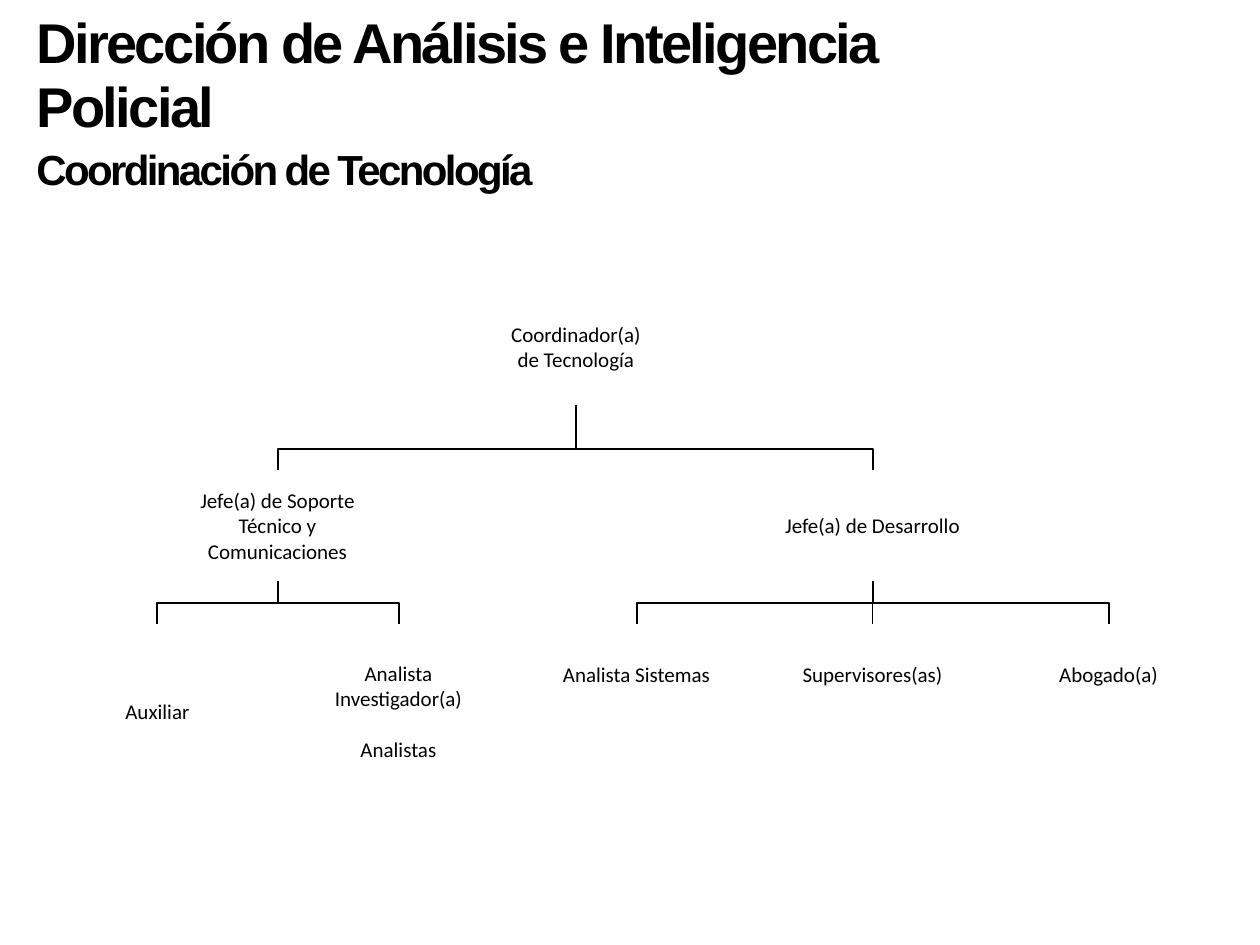
from pptx import Presentation
from pptx.dml.color import RGBColor
from pptx.enum import shapes, text
from pptx.oxml import ns, xmlchemy
from pptx.util import Emu, Pt

PX = 914400 / 126
BLACK = RGBColor(0, 0, 0)
WHITE = RGBColor(255, 255, 255)


class Chart:
    """Draws an organisation chart on one slide, in px."""
    font = "Calibri"
    size = 12
    bend = 21  # from a bend down to the child box

    def __init__(self, slide):
        self.slide = slide

    def px(self, *vals):
        return [Emu(round(v * PX)) for v in vals]

    def label(self, para, line, font, size, bold=False):
        run = para.add_run()
        run.text = line
        para.font.name = font
        para.font.size = Pt(size)
        para.font.bold = bold
        para.font.color.rgb = BLACK
        return run

    def title(self, x, y, w, h, lines):
        box = self.slide.shapes.add_textbox(*self.px(x, y, w, h))
        frame = box.text_frame
        frame.word_wrap = True
        for i, (line, size, space) in enumerate(lines):
            para = frame.add_paragraph() if i else frame.paragraphs[0]
            run = self.label(para, line, "Arial", size, True)
            run.font._element.set("spc", "-150")
            para.line_spacing = space
            if i:
                para.space_before = Pt(2)

    def box(self, x, y, w, h, *lines, gap=0):
        rect = self.slide.shapes.add_shape(
            shapes.MSO_SHAPE.RECTANGLE, *self.px(x, y, w, h))
        rect.shadow.inherit = False
        rect.fill.solid()
        rect.fill.fore_color.rgb = WHITE
        rect.line.fill.background()
        frame = rect.text_frame
        frame.word_wrap = True
        frame.vertical_anchor = text.MSO_ANCHOR.MIDDLE
        frame.margin_left = frame.margin_right = Pt(1)
        frame.margin_top = frame.margin_bottom = Pt(1)
        for i, line in enumerate(lines):
            para = frame.add_paragraph() if i else frame.paragraphs[0]
            para.alignment = text.PP_ALIGN.CENTER
            if i and gap:
                para.space_before = Pt(gap)
            self.label(para, line, self.font, self.size)
        return rect

    def elbow(self, top, low):
        x, y = (top.left + top.width / 2) / PX, (top.top + top.height) / PX
        end, foot = (low.left + low.width / 2) / PX, low.top / PX
        mid = foot - self.bend
        route = self.slide.shapes.build_freeform(x, y, scale=PX)
        route.add_line_segments([(x, mid), (end, mid), (end, foot)], close=False)
        link = route.convert_to_shape()
        link.fill.background()
        link.shadow.inherit = False
        self.ink(link)

    def line(self, top, low):
        link = self.slide.shapes.add_connector(
            shapes.MSO_CONNECTOR.STRAIGHT, 0, 0, 0, 0)
        link.begin_connect(top, 2)
        link.end_connect(low, 0)
        self.ink(link)
        link._element.spPr.append(xmlchemy.OxmlElement("a:effectLst"))

    def ink(self, shape):
        shape.line.color.rgb = BLACK
        shape.line.width = Pt(1)


def main():
    deck = Presentation()
    deck.slide_width, deck.slide_height = Emu(9144000), Emu(6858000)
    chart = Chart(deck.slides.add_slide(deck.slide_layouts[6]))

    # Heading
    chart.title(24, 6, 940, 185, [
        ("Dirección de Análisis e Inteligencia Policial", 32, 0.95),
        ("Coordinación de Tecnología", 24, 1.0)])

    # Head and the two chiefs
    head = chart.box(411, 289, 330, 116, "Coordinador(a)", "de Tecnología")
    tech = chart.box(166, 470, 223, 111,
                     "Jefe(a) de Soporte Técnico y Comunicaciones")
    dev = chart.box(761, 470, 223, 111, "Jefe(a) de Desarrollo")

    # Support staff
    aides = [chart.box(58 + 241 * i, 624, 199, 174, *lines, gap=14.6)
             for i, lines in enumerate([
                 ("Auxiliar",), ("Analista Investigador(a)", "Analistas")])]

    # Development staff
    staff = [chart.box(540 + 236 * i, 624, 193, 100, name)
             for i, name in enumerate([
                 "Analista Sistemas", "Supervisores(as)", "Abogado(a)"])]

    # Links
    for top, low in [(head, tech), (head, dev), (tech, aides[0]),
                     (tech, aides[1]), (dev, staff[0]), (dev, staff[2])]:
        chart.elbow(top, low)
    chart.line(dev, staff[1])

    deck.save("out.pptx")


if __name__ == "__main__":
    main()
